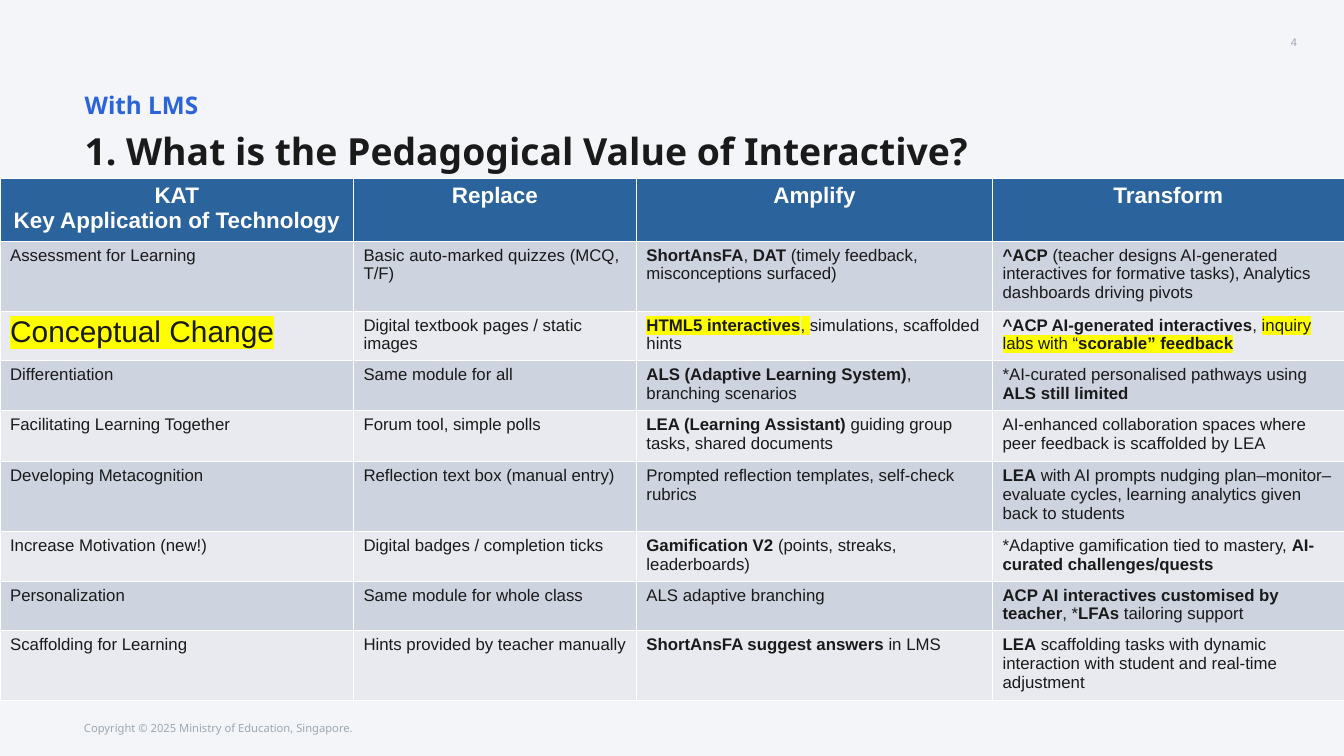
from lxml.etree import SubElement
from pptx import Presentation
from pptx.dml.color import RGBColor
from pptx.enum.text import MSO_ANCHOR as Anchor, PP_ALIGN as Align
from pptx.oxml.ns import qn
from pptx.util import Inches, Pt

PALE = RGBColor(0xF3, 0xF5, 0xF8)
GREY = RGBColor(0x9D, 0xA7, 0xB2)
BLUE = RGBColor(0x2B, 0x63, 0xD9)
NAVY = RGBColor(0x2B, 0x63, 0x9D)
INK = RGBColor(0x1A, 0x1A, 0x1A)
WHITE = RGBColor(0xFF, 0xFF, 0xFF)
BANDS = [RGBColor(0xCD, 0xD3, 0xDF), RGBColor(0xE8, 0xEA, 0xEF)]
YELLOW = RGBColor(0xFF, 0xFF, 0x00)

# text, box (left, top, width, height), margins (x, y), anchor, align, line spacing, font
TEXTS = [
    ("Copyright © 2025 Ministry of Education, Singapore.", (1.25, 10.65, 5.73, 0.29), (0, 0),
     Anchor.TOP, Align.LEFT, 1.42, dict(name="Noto Sans", size=Pt(12)), GREY),
    ("4", (14.9, 0.51, 4.5, 0.23), (0.1, 0.05),
     Anchor.MIDDLE, Align.RIGHT, 1.0, dict(name="Arial", size=Pt(12)), GREY),
    ("With LMS", (1.16, 1.21, 7.18, 0.52), (0.1, 0.05),
     Anchor.MIDDLE, Align.LEFT, 1.38, dict(name="Noto Sans", size=Pt(26), bold=True), BLUE),
    ("1. What is the Pedagogical Value of Interactive?", (1.16, 1.72, 17.68, 1.11), (0.1, 0.05),
     Anchor.TOP, Align.LEFT, 1.21, dict(name="Noto Sans", size=Pt(40), bold=True), INK),
]

# In table text, "_" switches bold on and off, "|" switches highlight.
HEADS = ["KAT\nKey Application of Technology", "Replace", "Amplify", "Transform"]
ROWS = [
    ["Assessment for Learning", "Basic auto-marked quizzes (MCQ, T/F)",
     "_ShortAnsFA_, _DAT_ (timely feedback, misconceptions surfaced)",
     "_^ACP_ (teacher designs AI-generated interactives for formative tasks), "
     "Analytics dashboards driving pivots"],
    ["|Conceptual Change|", "Digital textbook pages / static images",
     "|_HTML5 interactives_, |simulations, scaffolded hints",
     "_^ACP AI-generated interactives_, |inquiry labs with “_scorable” feedback_|"],
    ["Differentiation", "Same module for all",
     "_ALS (Adaptive Learning System)_, branching scenarios",
     "*AI-curated personalised pathways using _ALS still limited_"],
    ["Facilitating Learning Together", "Forum tool, simple polls",
     "_LEA (Learning Assistant)_ guiding group tasks, shared documents",
     "AI-enhanced collaboration spaces where peer feedback is scaffolded by LEA"],
    ["Developing Metacognition", "Reflection text box (manual entry)",
     "Prompted reflection templates, self-check rubrics",
     "_LEA_ with AI prompts nudging plan–monitor–evaluate cycles, "
     "learning analytics given back to students"],
    ["Increase Motivation (new!)", "Digital badges / completion ticks",
     "_Gamification V2_ (points, streaks, leaderboards)",
     "*Adaptive gamification tied to mastery, _AI-curated challenges/quests_"],
    ["Personalization", "Same module for whole class", "ALS adaptive branching",
     "_ACP AI interactives customised by teacher_, *_LFAs_ tailoring support"],
    ["Scaffolding for Learning", "Hints provided by teacher manually",
     "_ShortAnsFA suggest answers_ in LMS",
     "_LEA_ scaffolding tasks with dynamic interaction with student and real-time adjustment"],
]
FOCUS = "|Conceptual Change|"
WIDTHS = [5.26, 4.21, 5.3, 5.23]
HEIGHTS = [0.92, 1.01, 0.72, 0.72, 0.76, 1.01, 0.72, 0.72, 1.01]
TABLE_TOP = 2.65


def add_run(para, text, look, color, marked=False):
    run = para.add_run()
    run.text = text
    if marked:
        mark = SubElement(run.font._element, qn("a:highlight"))
        SubElement(mark, qn("a:srgbClr")).set("val", str(YELLOW))
    run.font.color.rgb = color
    for key, value in look.items():
        setattr(run.font, key, value)


def add_marked(para, text, size):
    """Write text whose "_" and "|" signs switch bold and highlight."""
    marked = False
    for i, part in enumerate(text.split("_")):
        for j, piece in enumerate(part.split("|")):
            if j:
                marked = not marked
            if piece:
                look = dict(name="Arial", size=Pt(size), bold=i % 2 == 1)
                add_run(para, piece, look, INK, marked)


def add_text(slide, text, box, margins, anchor, align, spacing, look, color):
    frame = slide.shapes.add_textbox(*map(Inches, box)).text_frame
    x, y = map(Inches, margins)
    form = dict(word_wrap=True, vertical_anchor=anchor, margin_left=x,
                margin_right=x, margin_top=y, margin_bottom=y)
    for key, value in form.items():
        setattr(frame, key, value)
    para = frame.paragraphs[0]
    para.alignment, para.line_spacing = align, spacing
    add_run(para, text, look, color)


def fill_cell(cell, color):
    cell.margin_left = cell.margin_right = Inches(0.15)
    cell.margin_top = cell.margin_bottom = Inches(0.07)
    cell.fill.solid()
    cell.fill.fore_color.rgb = color


def add_matrix(slide):
    shape = slide.shapes.add_table(len(HEIGHTS), len(WIDTHS), 0, Inches(TABLE_TOP),
                                   Inches(sum(WIDTHS)), Inches(sum(HEIGHTS)))
    table = shape.table
    for col, width in zip(table.columns, WIDTHS):
        col.width = Inches(width)
    for row, height in zip(table.rows, HEIGHTS):
        row.height = Inches(height)
    for c, head in enumerate(HEADS):
        cell = table.cell(0, c)
        fill_cell(cell, NAVY)
        for n, line in enumerate(head.split("\n")):
            frame = cell.text_frame
            para = frame.add_paragraph() if n else frame.paragraphs[0]
            para.alignment = Align.CENTER
            add_run(para, line, dict(name="Arial", size=Pt(24), bold=True), WHITE)
    for r, row in enumerate(ROWS):
        for c, text in enumerate(row):
            cell = table.cell(r + 1, c)
            fill_cell(cell, BANDS[r % 2])
            add_marked(cell.text_frame.paragraphs[0], text, 32 if text == FOCUS else 18)


def main():
    deck = Presentation()
    deck.slide_width, deck.slide_height = Inches(20), Inches(11.25)
    slide = deck.slides.add_slide(deck.slide_layouts[6])
    slide.background.fill.solid()
    slide.background.fill.fore_color.rgb = PALE
    for item in TEXTS:
        add_text(slide, *item)
    add_matrix(slide)
    deck.save("out.pptx")


if __name__ == "__main__":
    main()
